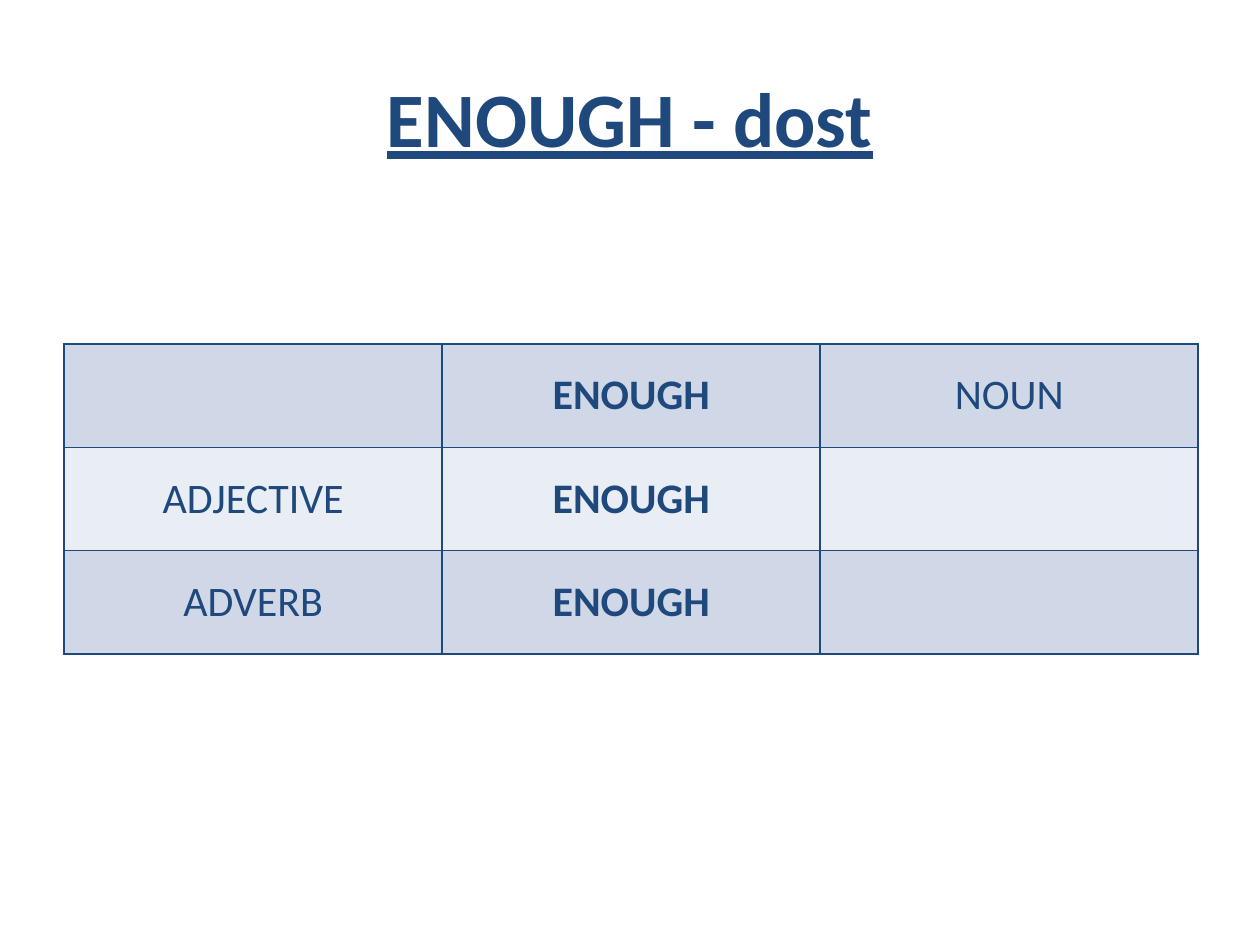
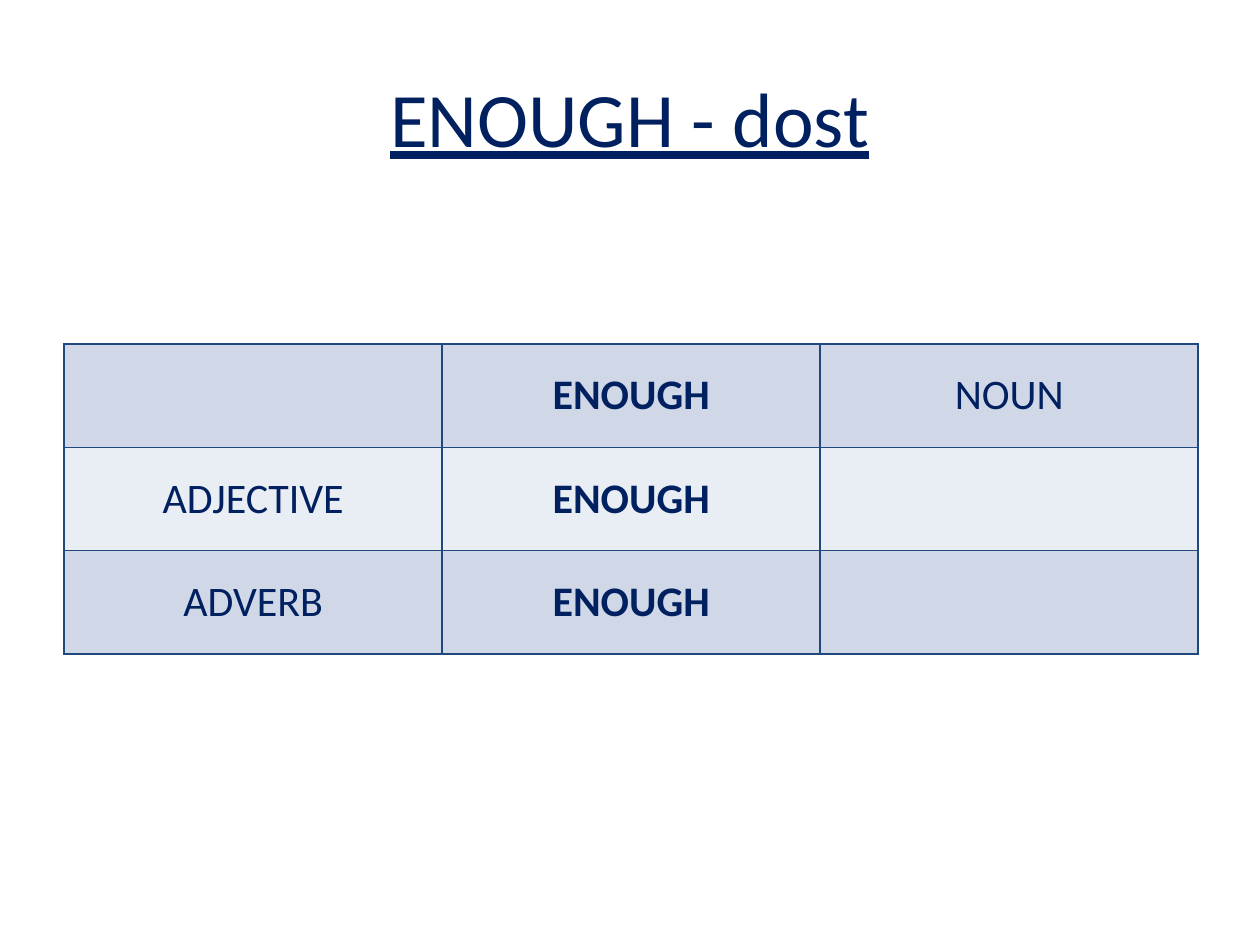
from dataclasses import dataclass

from lxml import etree
from pptx import Presentation
from pptx.dml.color import RGBColor
from pptx.enum.text import MSO_ANCHOR, PP_ALIGN
from pptx.oxml.ns import qn
from pptx.util import Inches, Pt

CENTER = PP_ALIGN.CENTER
MIDDLE = MSO_ANCHOR.MIDDLE

BLUE = RGBColor(0x1F, 0x49, 0x7D)
NAVY = RGBColor(0x00, 0x20, 0x60)
BANDS = (RGBColor(0xD0, 0xD8, 0xE8), RGBColor(0xE9, 0xED, 0xF4))

FONT = "Calibri"
TITLE_SIZE, CELL_SIZE = Pt(44), Pt(24)
BORDER_WIDTH = Pt(1)
SLIDE_W, SLIDE_H = Inches(10), Inches(7.5)
TITLE_ONLY = 5

CONTENT_W = int(SLIDE_W * 0.9)
TITLE_LEFT, TITLE_TOP = int(SLIDE_W * 0.05), int(SLIDE_H * 0.04)
TITLE_H = SLIDE_H // 6
TABLE_LEFT, TABLE_TOP = Inches(0.51), Inches(2.73)
ROW_H = Inches(0.82)

TITLE = "ENOUGH - dost"
KEYWORD = "ENOUGH"
WORD_ORDER = (
    ("", KEYWORD, "NOUN"),
    ("ADJECTIVE", KEYWORD, ""),
    ("ADVERB", KEYWORD, ""),
)


@dataclass(frozen=True)
class SlideStyle:
    text_color: RGBColor
    bold_title: bool


STYLES = (SlideStyle(BLUE, True), SlideStyle(NAVY, False))


def add_centered_run(tf, text: str, size: Pt, color: RGBColor, bold: bool):
    p = tf.paragraphs[0]
    p.alignment = CENTER
    r = p.add_run()
    r.text = text
    r.font.name = FONT
    r.font.size = size
    r.font.bold = bold
    r.font.color.rgb = color
    return r


def add_title(slide, style: SlideStyle) -> None:
    sp = slide.shapes.title
    sp.left, sp.top, sp.width, sp.height = TITLE_LEFT, TITLE_TOP, CONTENT_W, TITLE_H
    tf = sp.text_frame
    tf.vertical_anchor = MIDDLE
    r = add_centered_run(tf, TITLE, TITLE_SIZE, style.text_color, style.bold_title)
    r.font.underline = True


def set_borders(cell) -> None:
    """Outline all four sides; must precede the fill in the cell's XML."""
    tc_pr = cell._tc.get_or_add_tcPr()
    for side in ("a:lnL", "a:lnR", "a:lnT", "a:lnB"):
        ln = etree.SubElement(tc_pr, qn(side), w=str(BORDER_WIDTH))
        fill = etree.SubElement(ln, qn("a:solidFill"))
        etree.SubElement(fill, qn("a:srgbClr"), val=str(BLUE))


def add_word_order_table(slide, style: SlideStyle) -> None:
    n_rows, n_cols = len(WORD_ORDER), len(WORD_ORDER[0])
    table = slide.shapes.add_table(
        n_rows, n_cols, TABLE_LEFT, TABLE_TOP, CONTENT_W, n_rows * ROW_H
    ).table
    for i, words in enumerate(WORD_ORDER):
        for j, word in enumerate(words):
            cell = table.cell(i, j)
            set_borders(cell)
            cell.fill.solid()
            cell.fill.fore_color.rgb = BANDS[i % len(BANDS)]
            cell.vertical_anchor = MIDDLE
            if word:
                add_centered_run(
                    cell.text_frame, word, CELL_SIZE, style.text_color, word == KEYWORD
                )


def main() -> None:
    prs = Presentation()
    prs.slide_width, prs.slide_height = SLIDE_W, SLIDE_H
    for style in STYLES:
        slide = prs.slides.add_slide(prs.slide_layouts[TITLE_ONLY])
        add_word_order_table(slide, style)
        add_title(slide, style)
    prs.save("out.pptx")


if __name__ == "__main__":
    main()
